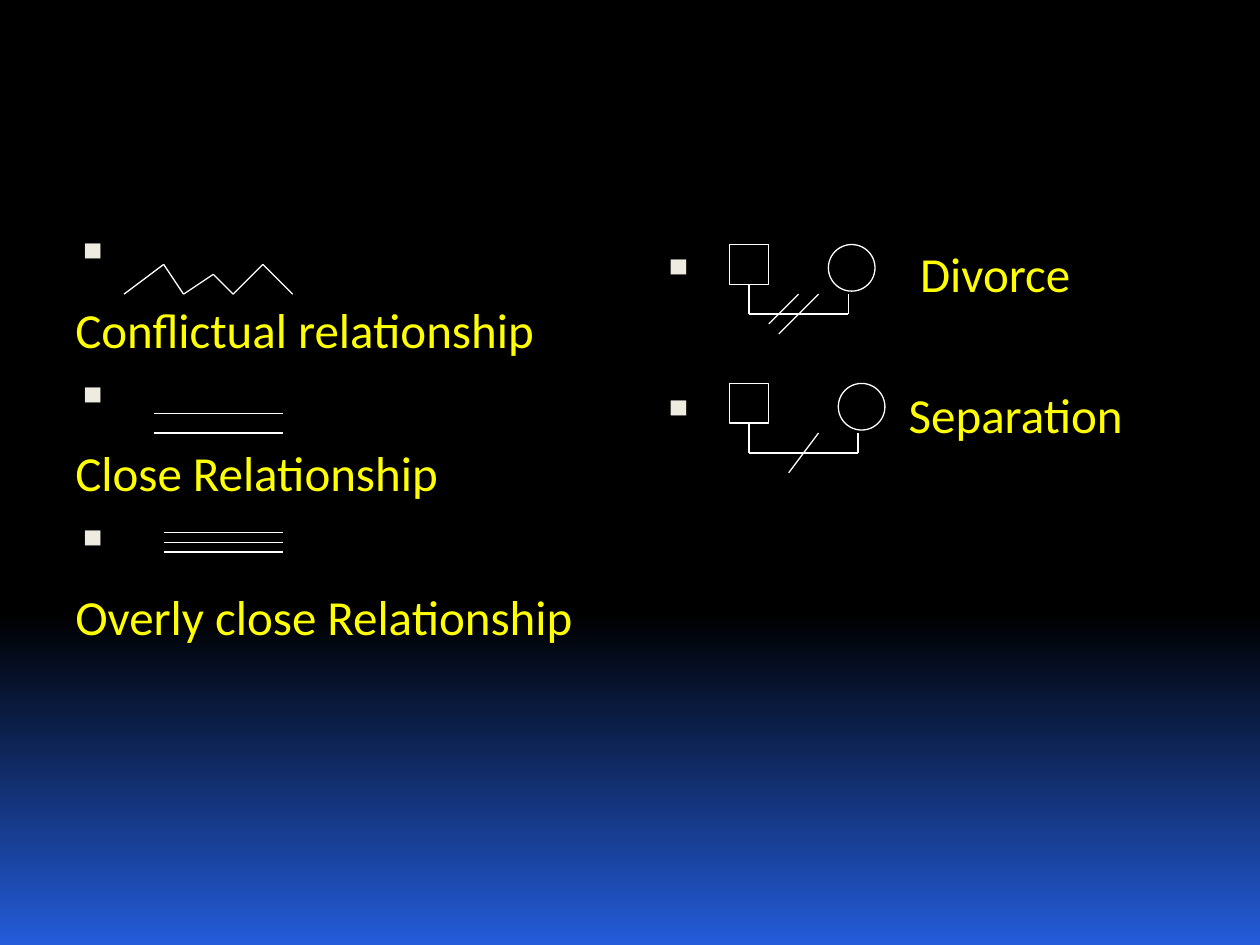
from itertools import pairwise

from lxml import etree
from pptx import Presentation
from pptx.dml.color import RGBColor
from pptx.enum.shapes import MSO_CONNECTOR, MSO_SHAPE
from pptx.oxml.ns import qn
from pptx.util import Cm, Pt

STRAIGHT = MSO_CONNECTOR.STRAIGHT
SQUARE = MSO_SHAPE.RECTANGLE
CIRCLE = MSO_SHAPE.OVAL

WHITE = "FFFFFF"
YELLOW = "FFFF00"
CREAM = "EEECE1"
BLACK = "000000"
BLUE = "245CD9"


def color(hex_string):
    return RGBColor.from_string(hex_string)


class GenogramSlide:
    font_name = "Calibri"
    font_size = Pt(28)
    line_width = Pt(0.75)

    def __init__(self, presentation):
        self.slide = presentation.slides.add_slide(presentation.slide_layouts[6])

    def background(self, top, bottom, start):
        fill = self.slide.background.fill
        fill.gradient()
        fill.gradient_angle = 270
        for stop, shade, position in zip(fill.gradient_stops, (top, bottom), (start, 1)):
            stop.color.rgb = color(shade)
            stop.position = position

    def line(self, start, end):
        connector = self.slide.shapes.add_connector(
            STRAIGHT, Cm(start[0]), Cm(start[1]), Cm(end[0]), Cm(end[1]))
        connector.line.color.rgb = color(WHITE)
        connector.line.width = self.line_width
        etree.SubElement(connector._element.spPr, qn("a:effectLst"))

    def polyline(self, points):
        for start, end in pairwise(points):
            self.line(start, end)

    def outline(self, kind, left, top, size):
        shape = self.slide.shapes.add_shape(kind, Cm(left), Cm(top), Cm(size), Cm(size))
        shape.shadow.inherit = False
        shape.fill.background()
        shape.line.color.rgb = color(WHITE)
        shape.line.width = self.line_width

    def bullet(self, paragraph, margin, indent):
        properties = paragraph._p.get_or_add_pPr()
        properties.set("marL", str(Cm(margin)))
        properties.set("indent", str(Cm(indent)))
        bullet_color = etree.SubElement(properties, qn("a:buClr"))
        etree.SubElement(bullet_color, qn("a:srgbClr"), val=CREAM)
        etree.SubElement(properties, qn("a:buSzPct"), val="95000")
        etree.SubElement(properties, qn("a:buChar"), char="▪")

    def text_list(self, left, top, width, height, items, space_before, line_spacing=None):
        """Each item is (text, margin, indent), with the lengths in cm."""
        box = self.slide.shapes.add_textbox(Cm(left), Cm(top), Cm(width), Cm(height))
        text_frame = box.text_frame
        text_frame.word_wrap = True
        text_frame.text = "\n".join(text for text, _, _ in items)
        for paragraph, (_, margin, indent) in zip(text_frame.paragraphs, items):
            paragraph.space_before = space_before
            paragraph.line_spacing = line_spacing
            self.bullet(paragraph, margin, indent)
            for run in paragraph.runs:
                run.font.name = self.font_name
                run.font.size = self.font_size
                run.font.color.rgb = color(YELLOW)
            # A line break carries its own text size
            for line_break in paragraph._p.findall(qn("a:br")):
                size = str(int(self.font_size.pt * 100))
                etree.SubElement(line_break, qn("a:rPr"), sz=size)

    def couple(self, top, circle_left, slashes):
        """Square and circle joined by a bracket; slashes are relative to top."""
        square_left, square_size = 14.7, 0.8
        square_middle = square_left + square_size / 2
        circle_stem = circle_left + 0.4
        bar = top + 1.4
        self.outline(SQUARE, square_left, top, square_size)
        self.outline(CIRCLE, circle_left, top, 0.94)
        self.polyline([(square_middle, top + square_size), (square_middle, bar),
                       (circle_stem, bar), (circle_stem, top + 1)])
        for (x1, y1), (x2, y2) in slashes:
            self.line((x1, top + y1), (x2, top + y2))


def main():
    presentation = Presentation()
    presentation.slide_width, presentation.slide_height = Cm(25.4), Cm(19.05)
    genogram = GenogramSlide(presentation)
    genogram.background(BLACK, BLUE, 0.65)

    # Labels: on the left each one stands below its symbol, on the right beside it
    labels = ("Conflictual relationship", "Close Relationship", "Overly close Relationship")
    genogram.text_list(1.27, 4.2, 12.83, 12.5,
                       [("\v" + label, 0, 0) for label in labels],
                       Pt(0), Pt(41))
    genogram.text_list(12.9, 4.78, 11.23, 12.57,
                       [("Divorce", 5.4, -5.22), ("Separation", 5.17, -4.99)],
                       Pt(47))

    # Conflictual relationship: zigzag
    genogram.polyline([(2.5, 5.93), (3.3, 5.33), (3.7, 5.93), (4.3, 5.53),
                       (4.7, 5.93), (5.3, 5.33), (5.9, 5.93)])

    # Close and overly close relationships: parallel lines
    for left, heights in ((3.1, (8.33, 8.73)), (3.3, (10.73, 10.93, 11.13))):
        for y in heights:
            genogram.line((left, y), (5.7, y))

    # Divorce: two slashes; separation: one slash
    genogram.couple(4.93, 16.7, [((15.5, 1.6), (16.1, 1)), ((15.7, 1.8), (16.5, 1))])
    genogram.couple(7.73, 16.9, [((15.9, 1.8), (16.5, 1))])

    presentation.save("out.pptx")


if __name__ == "__main__":
    main()
